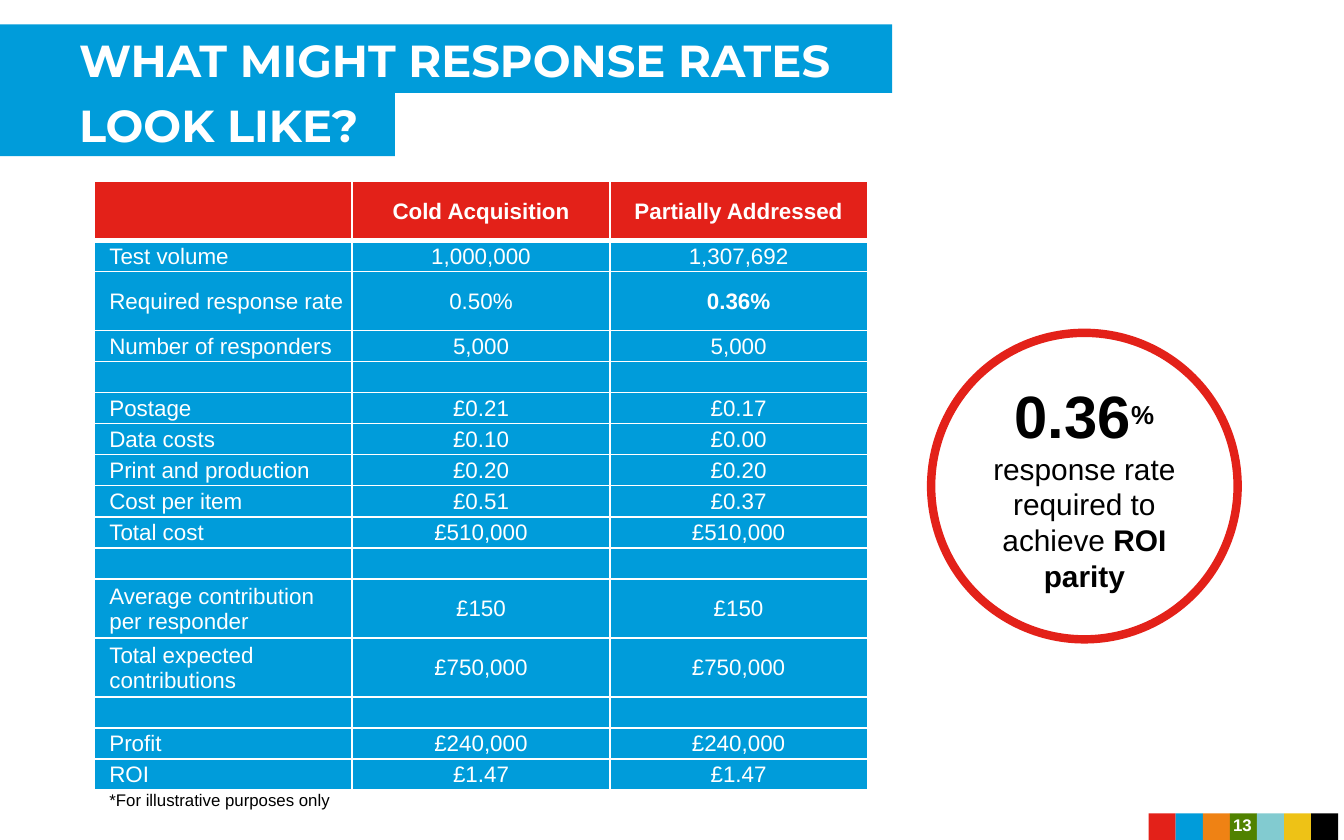
from lxml import etree
from pptx import Presentation
from pptx.dml.color import RGBColor
from pptx.enum.shapes import MSO_SHAPE as Shape
from pptx.enum.text import MSO_ANCHOR as Anchor, MSO_AUTO_SIZE as AutoSize, PP_ALIGN as Align
from pptx.oxml.ns import qn
from pptx.util import Pt

RED, BLUE, WHITE, BLACK = "E32119", "009CDA", "FFFFFF", "000000"

# Content
TITLE_LINES = [  # text, top, width, height
    ("WHAT MIGHT RESPONSE RATES", 13, 481, 36.7),
    ("LOOK LIKE?", 48.4, 214.6, 35.3),
]
ROWS = [
    ("", "Cold Acquisition", "Partially Addressed"),
    ("Test volume", "1,000,000", "1,307,692"),
    ("Required response rate", "0.50%", "0.36%"),
    ("Number of responders", "5,000", "5,000"),
    ("", "", ""),
    ("Postage", "£0.21", "£0.17"),
    ("Data costs", "£0.10", "£0.00"),
    ("Print and production", "£0.20", "£0.20"),
    ("Cost per item", "£0.51", "£0.37"),
    ("Total cost", "£510,000", "£510,000"),
    ("", "", ""),
    ("Average contribution per responder", "£150", "£150"),
    ("Total expected contributions", "£750,000", "£750,000"),
    ("", "", ""),
    ("Profit", "£240,000", "£240,000"),
    ("ROI", "£1.47", "£1.47"),
    ("*For illustrative purposes only", "", ""),
]
TALL_ROWS = {0, 2, 11, 12}
BOLD_CELLS = {(0, 1), (0, 2), (2, 2)}
CALLOUT = [  # text, format
    ("0.36", dict(size=32, bold=True)),
    ("%", dict(size=24, bold=True, baseline=30000)),
    (" ", dict(size=18)),
    ("response rate required to achieve ", dict(size=16)),
    ("ROI parity", dict(size=16, bold=True)),
]
STRIP_COLORS = [RED, BLUE, "EF8214", "508200", "82CBD0", "EEC216", BLACK]
PAGE_NUMBER = "13"


def rgb(value):
    return RGBColor.from_string(value)


def add_run(paragraph, text, size=12, color=WHITE, bold=False, font="Arial", baseline=None):
    run = paragraph.add_run()
    run.text = text
    run.font.size = Pt(size)
    run.font.name = font
    run.font.bold = bold
    run.font.color.rgb = rgb(color)
    if baseline:
        run.font._element.set("baseline", str(baseline))


def set_frame(frame, insets=(7.2, 3.6, 7.2, 3.6), align=Align.LEFT):
    frame.margin_left, frame.margin_top, frame.margin_right, frame.margin_bottom = map(Pt, insets)
    frame.word_wrap = True
    frame.auto_size = AutoSize.NONE
    frame.vertical_anchor = Anchor.MIDDLE
    paragraph = frame.paragraphs[0]
    paragraph.alignment = align
    return paragraph


def add_shape(slide, kind, box, fill, line=None, line_width=0):
    shape = slide.shapes.add_shape(kind, *map(Pt, box))
    shape.shadow.inherit = False
    shape.fill.solid()
    shape.fill.fore_color.rgb = rgb(fill)
    if line:
        shape.line.color.rgb = rgb(line)
        shape.line.width = Pt(line_width)
    else:
        shape.line.fill.background()
    return shape


def add_border(cell, side, width):
    border = etree.SubElement(cell._tc.get_or_add_tcPr(), qn("a:ln" + side), w=str(Pt(width)))
    fill = etree.SubElement(border, qn("a:solidFill"))
    etree.SubElement(fill, qn("a:srgbClr"), val=WHITE)


def format_cell(cell, row, column, text):
    last = len(ROWS) - 1
    for side in "LRTB":
        heavy = (row, side) in {(0, "B"), (1, "T")}
        add_border(cell, side, 3 if heavy else 1)
    cell.fill.solid()
    cell.fill.fore_color.rgb = rgb({0: RED, last: WHITE}.get(row, BLUE))
    cell.margin_left = cell.margin_top = cell.margin_right = Pt(0.7)
    cell.margin_bottom = 0
    cell.vertical_anchor = Anchor.TOP if row == last else Anchor.MIDDLE
    paragraph = cell.text_frame.paragraphs[0]
    paragraph.alignment = Align.CENTER if column else Align.LEFT
    if not text:
        # Keeps empty cells from stretching their row
        etree.SubElement(paragraph._p, qn("a:endParaRPr"), sz="900")
        return
    if column == 0:
        paragraph._p.get_or_add_pPr().set("marL", str(Pt(7.2)))
        paragraph._p.get_or_add_pPr().set("indent", "0")
    add_run(paragraph, text, size=9 if row == last else 12,
            color=BLACK if row == last else WHITE, bold=(row, column) in BOLD_CELLS)


def add_titles(slide):
    for index, (text, top, width, height) in enumerate(TITLE_LINES):
        box = (-3, top, width, height)
        if index == 0:
            shape = slide.shapes.title
            shape.left, shape.top, shape.width, shape.height = map(Pt, box)
            shape.fill.solid()
            shape.fill.fore_color.rgb = rgb(BLUE)
        else:
            shape = add_shape(slide, Shape.RECTANGLE, box, BLUE)
        paragraph = set_frame(shape.text_frame, (45.4, 3.6, 6.5, 2.6))
        add_run(paragraph, text, size=24, bold=True, font="Montserrat")


def add_cost_table(slide):
    heights = [31.6 if row in TALL_ROWS else 16.65 for row in range(len(ROWS))]
    frame = slide.shapes.add_table(len(ROWS), 3, Pt(50.7), Pt(97.2), Pt(414), Pt(sum(heights)))
    table = frame.table
    table.horz_banding = False
    for column in table.columns:
        column.width = Pt(138)
    for row, values in enumerate(ROWS):
        table.rows[row].height = Pt(heights[row])
        for column, text in enumerate(values):
            format_cell(table.cell(row, column), row, column, text)


def main():
    presentation = Presentation()
    presentation.slide_width, presentation.slide_height = Pt(720), Pt(450)
    slide = presentation.slides.add_slide(presentation.slide_layouts[5])

    # Colour strip
    for index, color in enumerate(STRIP_COLORS):
        add_shape(slide, Shape.RECTANGLE, (615.4 + 14.5 * index, 435.7, 14.5, 14.5), color)

    add_titles(slide)
    add_cost_table(slide)

    # Callout
    circle = add_shape(slide, Shape.OVAL, (498.8, 178.3, 164.2, 164.2), WHITE, RED, 4.5)
    paragraph = set_frame(circle.text_frame, align=Align.CENTER)
    for text, style in CALLOUT:
        add_run(paragraph, text, color=BLACK, **style)

    # Page number
    number = slide.shapes.add_textbox(Pt(645.8), Pt(430), Pt(39.6), Pt(24))
    paragraph = set_frame(number.text_frame, align=Align.CENTER)
    add_run(paragraph, PAGE_NUMBER, size=9, bold=True)

    presentation.save("out.pptx")


if __name__ == "__main__":
    main()
